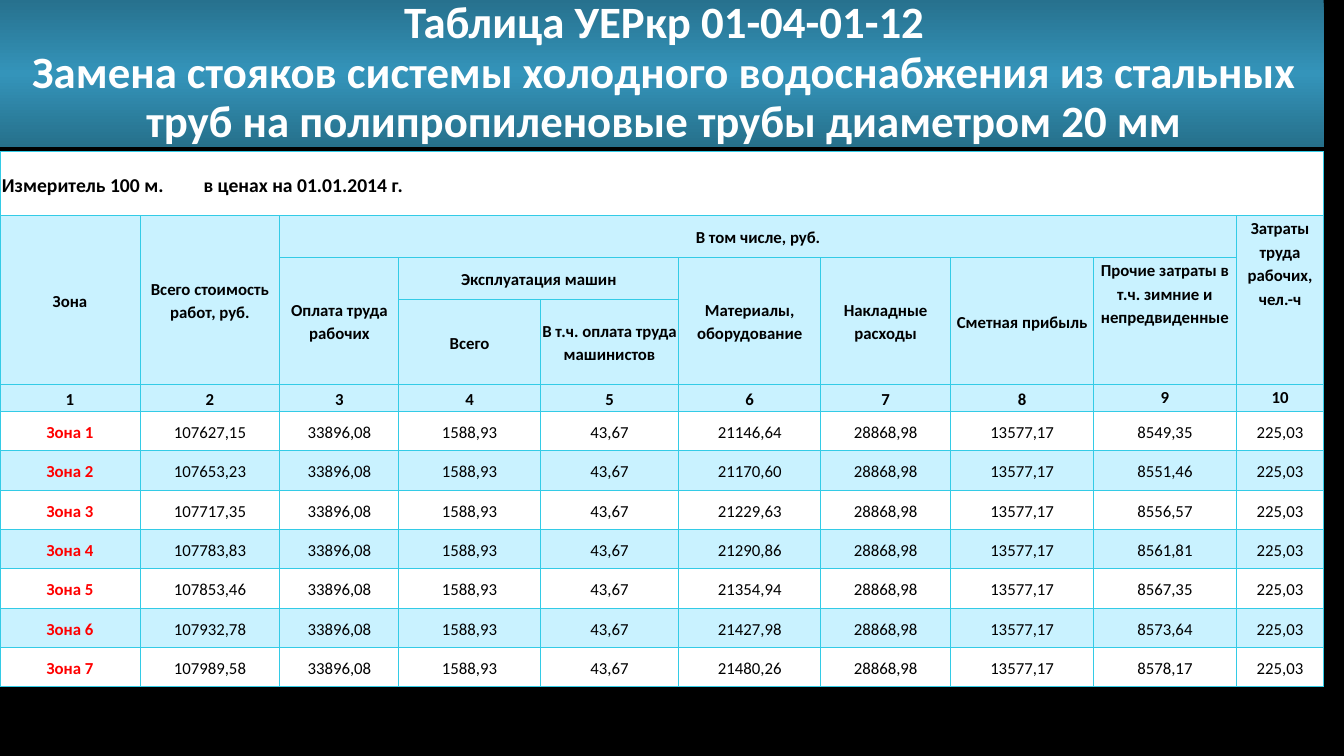
"""Build the slide with the unit price table for replacing cold water risers."""
from dataclasses import dataclass

from lxml.etree import SubElement
from pptx import Presentation
from pptx.dml.color import RGBColor as RGB
from pptx.enum.shapes import MSO_SHAPE as SHAPE
from pptx.enum.text import MSO_ANCHOR as ANCHOR, PP_ALIGN as ALIGN
from pptx.oxml.ns import qn
from pptx.util import Pt


@dataclass(frozen=True)
class Theme:
    font: str = "Calibri"
    backdrop: str = "000000"
    banner: tuple = ((0, "27718E"), (50, "3494BA"), (100, "26708B"))
    title: str = "FFFFFF"
    ink: str = "000000"
    zone: str = "FF0000"
    plain: str = "FFFFFF"
    tint: str = "C9F2FF"
    border: str = "33CBE6"
    title_size: int = 32
    caption_size: int = 14
    table_size: int = 12


theme = Theme()


def write(frame, text, size=theme.table_size, color=theme.ink, bold=True,
          align=ALIGN.CENTER, spacing=1.15, indent=0, gap=0, tab=0):
    for index, line in enumerate(text.split("\n")):
        paragraph = frame.add_paragraph() if index else frame.paragraphs[0]
        paragraph.text = line
        paragraph.alignment = align
        paragraph.line_spacing = spacing
        if index:
            paragraph.space_before = Pt(gap)
        properties = paragraph._p.get_or_add_pPr()
        properties.set("marL", str(Pt(indent)))
        properties.set("indent", "0")
        if tab:
            tabs = SubElement(properties, qn("a:tabLst"))
            SubElement(tabs, qn("a:tab"), pos=str(Pt(tab)), algn="r")
        font = paragraph.runs[0].font
        font.name, font.size, font.bold = theme.font, Pt(size), bold
        font.color.rgb = RGB.from_string(color)


def style_cell(cell, fill, side_inset, anchor):
    properties = cell._tc.get_or_add_tcPr()
    for side in ("lnL", "lnR", "lnT", "lnB"):
        edge = SubElement(properties, qn(f"a:{side}"), w=str(Pt(0.75)))
        paint = SubElement(edge, qn("a:solidFill"))
        SubElement(paint, qn("a:srgbClr"), val=theme.border)
    cell.fill.solid()
    cell.fill.fore_color.rgb = RGB.from_string(fill)
    cell.margin_left = cell.margin_right = Pt(side_inset)
    cell.margin_top = cell.margin_bottom = Pt(0)
    cell.vertical_anchor = anchor


deck = Presentation()
deck.slide_width, deck.slide_height = Pt(960), Pt(540)
slide = deck.slides.add_slide(deck.slide_layouts[6])
slide.background.fill.solid()
slide.background.fill.fore_color.rgb = RGB.from_string(theme.backdrop)

banner = slide.shapes.add_shape(SHAPE.RECTANGLE, Pt(0), Pt(0), Pt(945.5), Pt(105))
banner.shadow.inherit = False
banner.line.fill.background()
banner.fill.gradient()
banner.fill.gradient_angle = 270
stops = banner._element.spPr.find(qn("a:gradFill")).find(qn("a:gsLst"))
stops.clear()
for percent, shade in theme.banner:
    stop = SubElement(stops, qn("a:gs"), pos=str(percent * 1000))
    SubElement(stop, qn("a:srgbClr"), val=shade)
banner.text_frame.word_wrap = True
banner.text_frame.vertical_anchor = ANCHOR.MIDDLE
write(banner.text_frame,
      "Таблица УЕРкр 01-04-01-12\n"
      "Замена стояков системы холодного водоснабжения из стальных "
      "труб на полипропиленовые трубы диаметром 20 мм",
      size=theme.title_size, color=theme.title, spacing=0.9, indent=3.6, gap=1)

column_widths = [100, 100, 85, 101, 99, 101.25, 93, 102, 102, 62.5]
header_heights = [45.5, 30, 30, 60.5, 19.5]
zone_costs = [
    ("107627,15", "21146,64", "8549,35"),
    ("107653,23", "21170,60", "8551,46"),
    ("107717,35", "21229,63", "8556,57"),
    ("107783,83", "21290,86", "8561,81"),
    ("107853,46", "21354,94", "8567,35"),
    ("107932,78", "21427,98", "8573,64"),
    ("107989,58", "21480,26", "8578,17"),
]
row_heights = header_heights + [28.1] * len(zone_costs)
first_zone_row = len(header_heights)
headings = [
    (1, 0, 3, 1, "Зона"),
    (1, 1, 3, 1, "Всего стоимость работ, руб."),
    (1, 2, 1, 7, "В том числе, руб."),
    (1, 9, 3, 1, "Затраты труда рабочих, чел.-ч"),
    (2, 2, 2, 1, "Оплата труда рабочих"),
    (2, 3, 1, 2, "Эксплуатация машин"),
    (2, 5, 2, 1, "Материалы, оборудование"),
    (2, 6, 2, 1, "Накладные расходы"),
    (2, 7, 2, 1, "Сметная прибыль"),
    (2, 8, 2, 1, "Прочие затраты в т.ч. зимние и непредвиденные"),
    (3, 3, 1, 1, "Всего"),
    (3, 4, 1, 1, "В т.ч. оплата труда машинистов"),
]

prices = slide.shapes.add_table(
    len(row_heights), len(column_widths), Pt(0), Pt(108.5),
    Pt(sum(column_widths)), Pt(sum(row_heights))).table
prices.first_row = prices.horz_banding = False
for column, width in zip(prices.columns, column_widths):
    column.width = Pt(width)
for row, height in zip(prices.rows, row_heights):
    row.height = Pt(height)

for row in range(len(row_heights)):
    is_zone = row >= first_zone_row
    is_plain = row == 0 or is_zone and (row - first_zone_row) % 2 == 0
    for column in range(len(column_widths)):
        is_top = 0 < row < first_zone_row and column >= 8
        is_wide = is_zone or row > 0 and column in (5, 8, 9)
        style_cell(prices.cell(row, column),
                   fill=theme.plain if is_plain else theme.tint,
                   side_inset=2.88 if is_wide else 1.44,
                   anchor=ANCHOR.TOP if is_top else ANCHOR.MIDDLE)

prices.cell(0, 0).merge(prices.cell(0, len(column_widths) - 1))
write(prices.cell(0, 0).text_frame, "Измеритель 100 м.\tв ценах на 01.01.2014 г.",
      size=theme.caption_size, align=ALIGN.LEFT, tab=934)

for row, column, tall, wide, heading in headings:
    heading_cell = prices.cell(row, column)
    if tall * wide > 1:
        heading_cell.merge(prices.cell(row + tall - 1, column + wide - 1))
    write(heading_cell.text_frame, heading)

for column in range(len(column_widths)):
    write(prices.cell(first_zone_row - 1, column).text_frame, str(column + 1))

for index, (total, materials, other) in enumerate(zone_costs):
    values = [f"Зона {index + 1}", total, "33896,08", "1588,93", "43,67",
              materials, "28868,98", "13577,17", other, "225,03"]
    for column, value in enumerate(values):
        is_name = column == 0
        write(prices.cell(first_zone_row + index, column).text_frame, value,
              color=theme.zone if is_name else theme.ink, bold=is_name)

deck.save("out.pptx")
